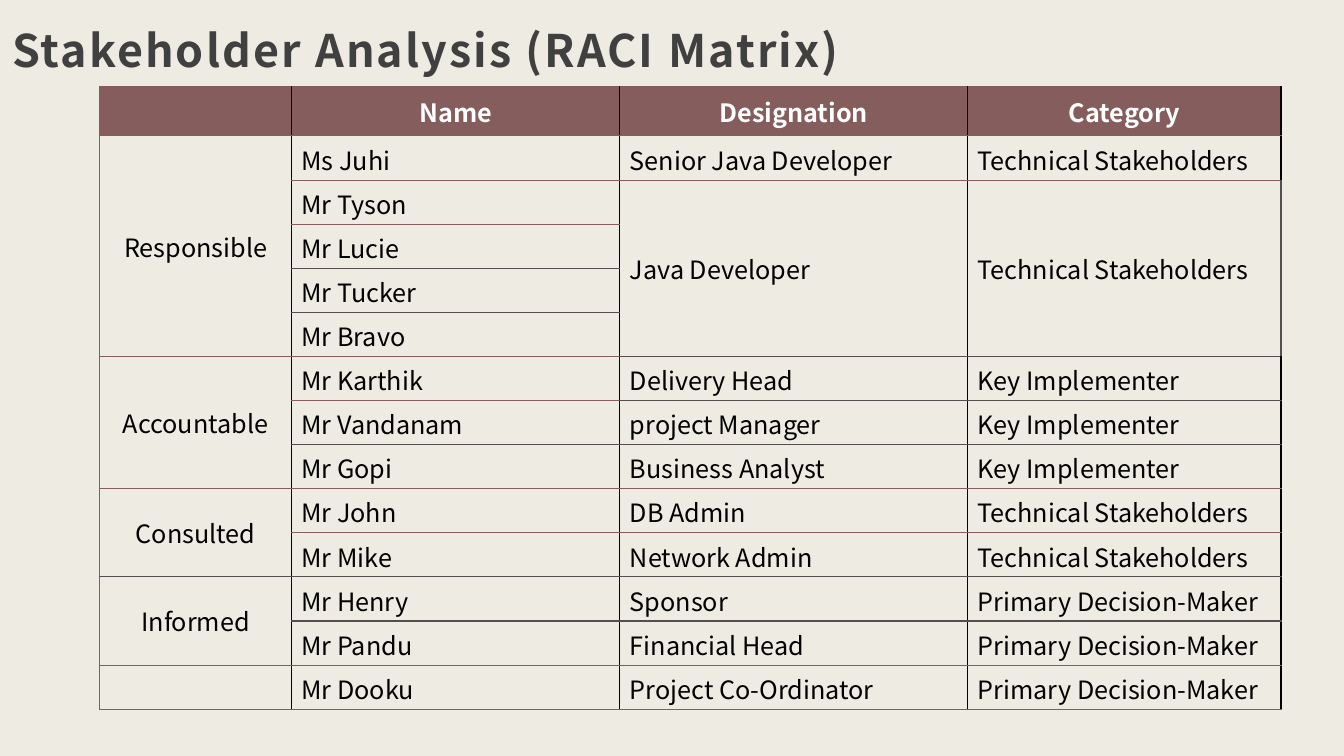
"""Build the stakeholder RACI matrix slide."""
from lxml.etree import SubElement as Sub
from pptx import Presentation as Deck
from pptx.dml.color import RGBColor as Rgb
from pptx.enum.text import MSO_ANCHOR as Anchor, PP_ALIGN as Align
from pptx.oxml.ns import qn
from pptx.util import Pt

HUES = {"page": "EEEBE2", "title": "404040", "wine": "855D5D",
        "slate": "564E4E", "black": "000000", "white": "FFFFFF"}
WIDTHS = [136.8, 234.7, 248.4, 223.9]
HEAD, ROW = 35.2, 31.5
TECH, KEY, PRIME = "Technical Stakeholders", "Key Implementer", "Primary Decision-Maker"
ROWS = [
    ["", "Name", "Designation", "Category"],
    ["Responsible", "Ms Juhi", "Senior Java Developer", TECH],
    ["", "Mr Tyson", "Java Developer", TECH],
    ["", "Mr Lucie", "", ""],
    ["", "Mr Tucker", "", ""],
    ["", "Mr Bravo", "", ""],
    ["Accountable", "Mr Karthik", "Delivery Head", KEY],
    ["", "Mr Vandanam", "project Manager", KEY],
    ["", "Mr Gopi", "Business Analyst", KEY],
    ["Consulted", "Mr John", "DB Admin", TECH],
    ["", "Mr Mike", "Network Admin", TECH],
    ["Informed", "Mr Henry", "Sponsor", PRIME],
    ["", "Mr Pandu", "Financial Head", PRIME],
    ["", "Mr Dooku", "Project Co-Ordinator", PRIME],
]
SPANS = {(1, 0): 5, (2, 2): 4, (2, 3): 4, (6, 0): 3, (9, 0): 2, (11, 0): 2}
DARK = {4, 5, 8, 11, 12}
PART = {6, 7}


def write(frame, text, size=18, hue="black", bold=False, align=Align.LEFT, gap=0):
    para = frame.paragraphs[0]
    para.alignment = align
    run = para.add_run()
    run.text = text
    font = run.font
    font.name, font.size, font.bold = Slide.face, Pt(size), bold
    font.color.rgb = Rgb.from_string(HUES[hue])
    props = run._r.get_or_add_rPr()
    if gap:
        props.set("spc", str(int(gap * 100)))
    Sub(props, qn("a:ea")).set("typeface", Slide.face)


def rule(row, col):
    dark = row in DARK or (row in PART and col > 1)
    return ("slate", 1) if dark else ("wine", 0.75)


class Slide:
    face = "Noto Sans CJK JP"

    def __init__(self, deck):
        self.page = deck.slides.add_slide(deck.slide_layouts[6])
        fill = self.page.background.fill
        fill.solid()
        fill.fore_color.rgb = Rgb.from_string(HUES["page"])

    def title(self, text, left, top, width, height):
        box = self.page.shapes.add_textbox(Pt(left), Pt(top), Pt(width), Pt(height))
        frame = box.text_frame
        frame.word_wrap = True
        frame.vertical_anchor = Anchor.BOTTOM
        frame.margin_left = frame.margin_right = frame.margin_top = Pt(8.64)
        frame.margin_bottom = Pt(7.2)
        write(frame, text, size=32, hue="title", bold=True, gap=1.5)

    def edge(self, cell, side, hue, width):
        line = Sub(cell._tc.get_or_add_tcPr(), qn("a:ln" + side))
        line.set("w", str(int(Pt(width))))
        Sub(Sub(line, qn("a:solidFill")), qn("a:srgbClr")).set("val", HUES[hue])

    def cell(self, cell, text, row, col, first, last):
        self.edge(cell, "L", *(("black", 1) if col else ("wine", 0.75)))
        right = "slate" if col == 3 and last > first else "black"
        self.edge(cell, "R", right, 1)
        self.edge(cell, "T", *rule(first, col))
        self.edge(cell, "B", *rule(last + 1, col))
        if row:
            cell.fill.background()
        else:
            cell.fill.solid()
            cell.fill.fore_color.rgb = Rgb.from_string(HUES["wine"])
        if row == 0 or last > first:
            cell.vertical_anchor = Anchor.MIDDLE
        if text:
            write(cell.text_frame, text, hue="black" if row else "white", bold=not row,
                  align=Align.LEFT if row and col else Align.CENTER)

    def table(self, rows, left, top):
        high = HEAD + ROW * (len(rows) - 1)
        grid = self.page.shapes.add_table(len(rows), len(WIDTHS), Pt(left), Pt(top),
                                          Pt(sum(WIDTHS)), Pt(high)).table
        grid.horz_banding = False
        for col, width in enumerate(WIDTHS):
            grid.columns[col].width = Pt(width)
        for row in range(len(rows)):
            grid.rows[row].height = Pt(ROW if row else HEAD)
        ends = {}
        for (row, col), count in SPANS.items():
            last = row + count - 1
            grid.cell(row, col).merge(grid.cell(last, col))
            ends.update({(step, col): (row, last) for step in range(row, last + 1)})
        for row, texts in enumerate(rows):
            for col, text in enumerate(texts):
                first, last = ends.get((row, col), (row, row))
                self.cell(grid.cell(row, col), text, row, col, first, last)


def main():
    deck = Deck()
    deck.slide_width, deck.slide_height = Pt(960), Pt(540)
    slide = Slide(deck)
    slide.title("Stakeholder Analysis (RACI Matrix)", 0, -43.9, 852.5, 105.8)
    slide.table(ROWS, 71.3, 61.9)
    deck.save("out.pptx")


if __name__ == "__main__":
    main()
